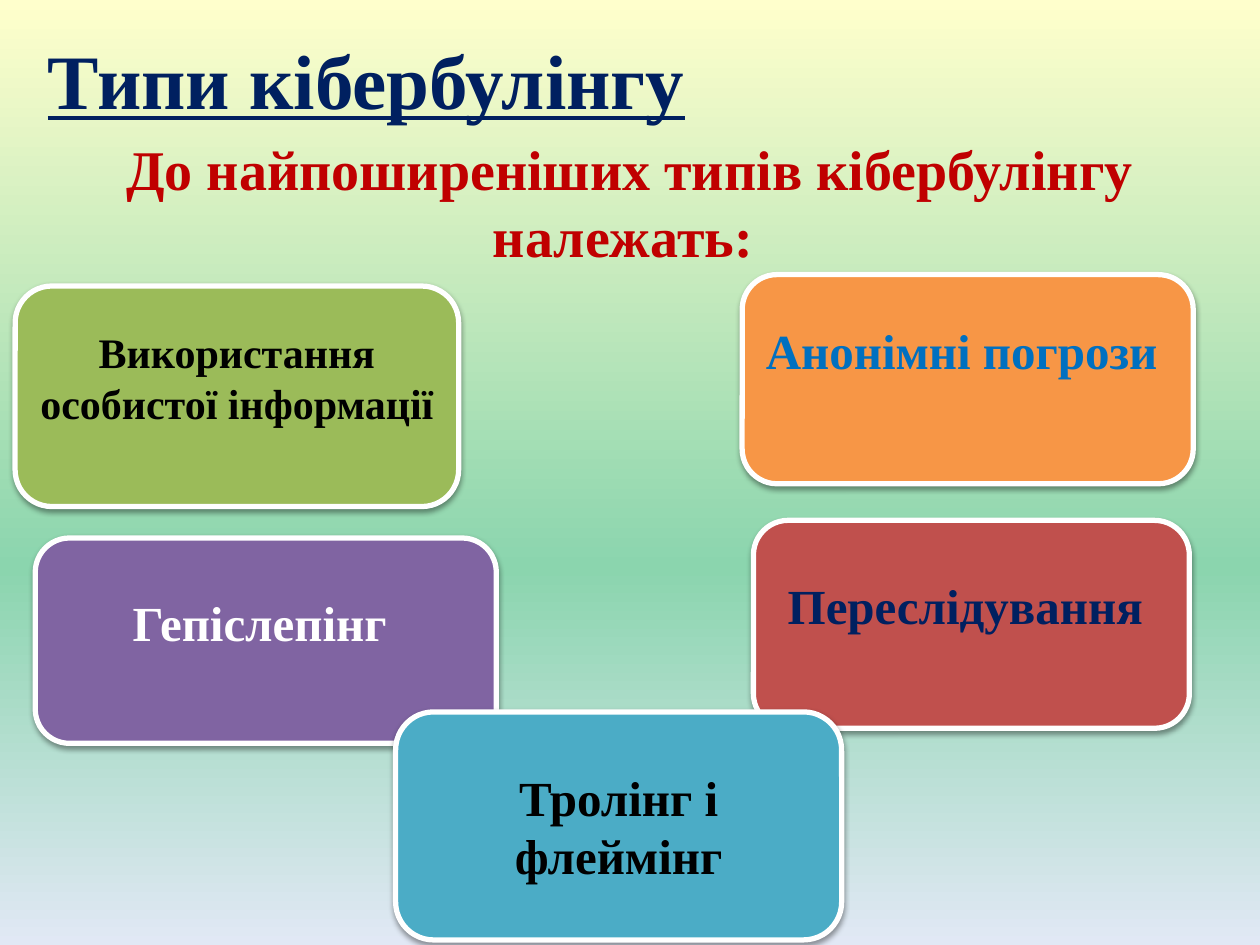
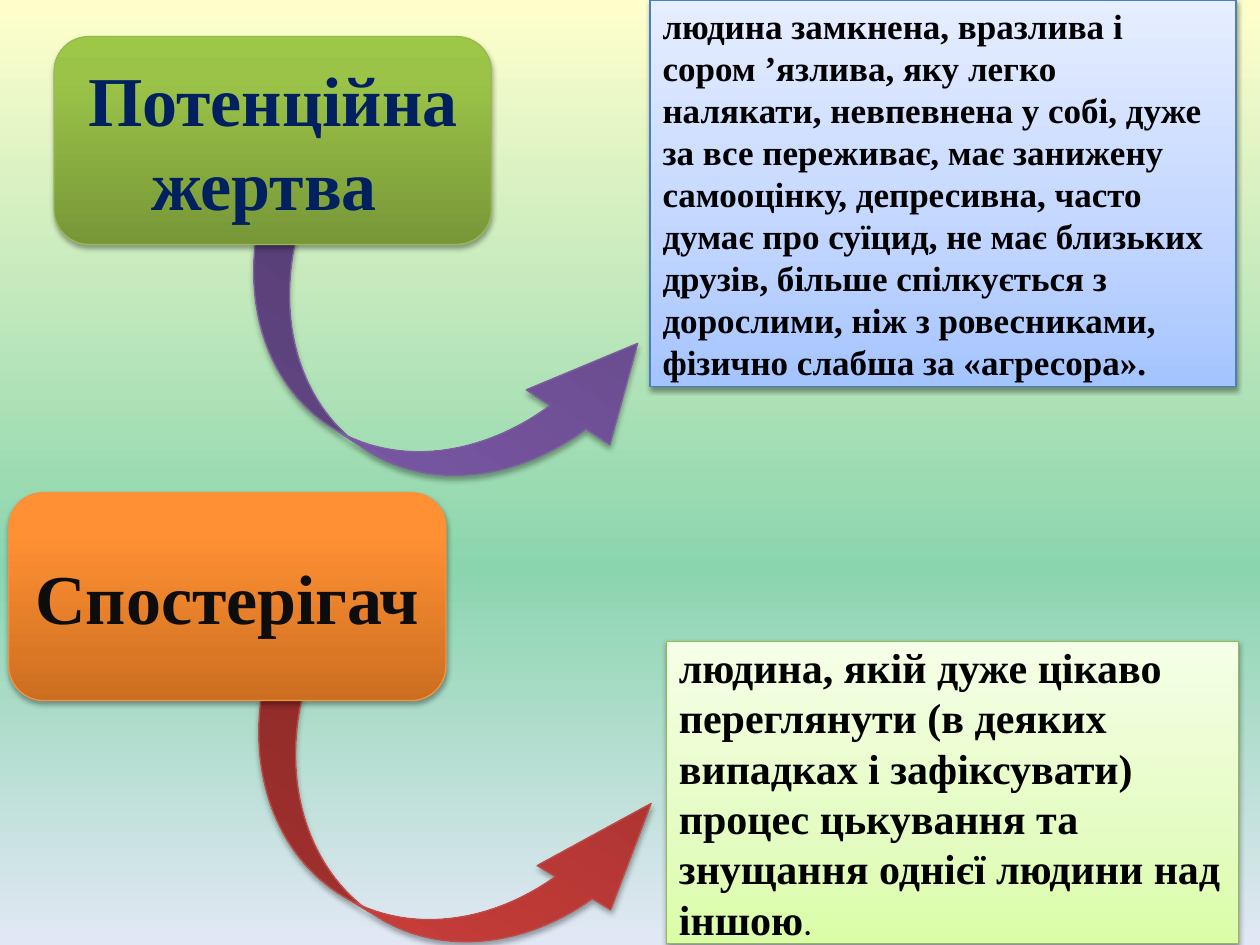
from dataclasses import dataclass

from lxml import etree
from pptx import Presentation
from pptx.dml.color import RGBColor
from pptx.enum.shapes import MSO_SHAPE
from pptx.enum.text import MSO_ANCHOR, PP_ALIGN
from pptx.oxml.ns import qn
from pptx.util import Inches, Pt

ROUNDED = MSO_SHAPE.ROUNDED_RECTANGLE
RECT = MSO_SHAPE.RECTANGLE
CURVED = MSO_SHAPE.CURVED_DOWN_ARROW
MIDDLE, TOP = MSO_ANCHOR.MIDDLE, MSO_ANCHOR.TOP
LEFT, CENTER = PP_ALIGN.LEFT, PP_ALIGN.CENTER
TITLE_ONLY, BLANK = 5, 6

FONT = "Times New Roman"
NAVY, BLACK, WHITE, RED = "002060", "000000", "FFFFFF", "C00000"
BACKGROUND = ((0, "FFFFCC"), (60, "8BD5AE"), (100, "E1E8F5"))
SOFT_SHADOW, DEEP_SHADOW = (35, 1.8), (38, 1.6)


@dataclass
class TypeCard:
    """A kind of cyberbullying; lift raises its text above the middle."""
    text: str
    box: tuple
    fill: str
    color: str
    size: int = 28
    lift: float = 0.3


@dataclass
class Role:
    """A participant: name card, curved arrow and description panel."""
    name: str
    name_box: tuple
    name_color: str
    name_fill: tuple
    name_line: str
    arrow_box: tuple
    arrow_rotation: float
    arrow_adjust: tuple
    arrow_fill: tuple
    arrow_line: str
    text: str
    ending: str
    text_box: tuple
    text_size: int
    text_fill: tuple
    text_line: str


TYPES = [
    TypeCard("Використання особистої інформації ", (0.12, 2.27, 3.52, 1.75), "9BBB59", BLACK, size=24),
    TypeCard("Анонімні погрози ", (5.89, 2.18, 3.58, 1.66), "F79646", "0070C0", lift=0.47),
    TypeCard("Переслідування ", (5.98, 4.13, 3.46, 1.65), "C0504D", NAVY),
    TypeCard("Гепіслепінг ", (0.28, 4.27, 3.66, 1.63), "8064A2", WHITE),
    TypeCard("Тролінг і флеймінг", (3.14, 5.65, 3.54, 1.81), "4BACC6", BLACK, lift=0),
]

ROLES = [
    Role(
        name="Потенційна жертва ",
        name_box=(0.43, 0.29, 3.47, 1.65),
        name_color=NAVY,
        name_fill=((0, "779737"), (80, "9BC348"), (100, "9DC746")),
        name_line="98B955",
        arrow_box=(1.57, 1.8, 3.6, 1.89),
        arrow_rotation=213.3,
        arrow_adjust=(0.18, 0.42, 0.42),
        arrow_fill=((0, "5F4480"), (80, "7B58A6"), (100, "7C57A8")),
        arrow_line="7D60A0",
        text="людина замкнена, вразлива і сором ’язлива, яку легко налякати, "
             "невпевнена у собі, дуже за все переживає, має занижену самооцінку, "
             "депресивна, часто думає про суїцид, не має близьких друзів, більше "
             "спілкується з дорослими, ніж з ровесниками, фізично слабша за «агресора».",
        ending="",
        text_box=(5.16, 0, 4.65, 3.07),
        text_size=20,
        text_fill=((0, "A4C4FF"), (35, "BFD4FF"), (100, "E6EEFF")),
        text_line="4B7EBC",
    ),
    Role(
        name="Спостерігач",
        name_box=(0.07, 3.91, 3.47, 1.65),
        name_color="0D0D0D",
        name_fill=((0, "CC6E20"), (80, "FF9034"), (100, "FF9136")),
        name_line="F69240",
        arrow_box=(1.63, 5.49, 3.6, 1.89),
        arrow_rotation=211,
        arrow_adjust=(0.18, 0.36, 0.47),
        arrow_fill=((0, "9C2F2D"), (80, "CB3E3A"), (100, "CE3B37")),
        arrow_line="BF4C48",
        text="людина, якій дуже цікаво переглянути (в деяких випадках і "
             "зафіксувати) процес цькування та знущання однієї людини над іншою",
        ending=".",
        text_box=(5.29, 5.09, 4.54, 2.4),
        text_size=24,
        text_fill=((0, "DAFDA7"), (35, "E4FCC2"), (100, "F5FFE7")),
        text_line="98B955",
    ),
]


def rgb(color: str) -> RGBColor:
    """Turn a hex string into a colour."""
    return RGBColor.from_string(color)


def inches(box: tuple) -> list:
    """Convert left, top, width and height to lengths."""
    return [Inches(v) for v in box]


def add_color(parent, tag: str, color: str, **attrs):
    """Append an element that holds an RGB colour and return the colour."""
    el = etree.SubElement(parent, qn(tag), attrs)
    return etree.SubElement(el, qn("a:srgbClr"), val=color)


def set_gradient(fill, owner, stops: tuple, angle: int) -> None:
    """Fill with a linear gradient; the angle runs counter-clockwise."""
    fill.gradient()
    fill.gradient_angle = angle
    stop_list = next(owner.iter(qn("a:gsLst")))
    for old in list(stop_list):
        stop_list.remove(old)
    for position, color in stops:
        add_color(stop_list, "a:gs", color, pos=str(position * 1000))


def set_shadow(sp, alpha: int, distance: float) -> None:
    """Give a shape a soft shadow that falls straight down."""
    sp.shadow.inherit = False
    effects = sp._element.spPr.find(qn("a:effectLst"))
    color = add_color(effects, "a:outerShdw", BLACK, blurRad=str(Pt(3.1)),
                      dist=str(Pt(distance)), dir="5400000", rotWithShape="0")
    etree.SubElement(color, qn("a:alpha"), val=str(alpha * 1000))


def add_text(sp, text: str, *, size: int, color: str = BLACK, font: str = FONT,
             bold: bool = True, underline: bool = False, align=LEFT, anchor=MIDDLE) -> None:
    """Append a formatted run to the first paragraph of a shape."""
    tf = sp.text_frame
    tf.word_wrap = True
    tf.vertical_anchor = anchor
    p = tf.paragraphs[0]
    p.alignment = align
    r = p.add_run()
    r.text = text
    r.font.name, r.font.size = font, Pt(size)
    r.font.bold, r.font.underline = bold, underline
    r.font.color.rgb = rgb(color)


def add_panel(s, kind, box: tuple, fill, line: str, width: float, shadow: tuple):
    """Add a shape with a solid (string) or gradient (stops) fill."""
    sp = s.shapes.add_shape(kind, *inches(box))
    if isinstance(fill, str):
        sp.fill.solid()
        sp.fill.fore_color.rgb = rgb(fill)
    else:
        set_gradient(sp.fill, sp._element, fill, 90)
    sp.line.color.rgb = rgb(line)
    sp.line.width = Pt(width)
    set_shadow(sp, *shadow)
    return sp


def add_slide(prs, layout: int):
    """Add a slide with the shared background."""
    s = prs.slides.add_slide(prs.slide_layouts[layout])
    set_gradient(s.background.fill, s._element, BACKGROUND, 270)
    return s


def add_arrow(s, role: Role) -> None:
    """Add the curved arrow from a role's name to its description."""
    sp = add_panel(s, CURVED, role.arrow_box, role.arrow_fill, role.arrow_line, 0.75, SOFT_SHADOW)
    for i, value in enumerate(role.arrow_adjust):
        sp.adjustments[i] = value
    sp.rotation = role.arrow_rotation
    sp._element.spPr.find(qn("a:xfrm")).set("flipH", "1")


def add_role(s, role: Role) -> None:
    """Add a role's name card and description panel."""
    sp = add_panel(s, ROUNDED, role.name_box, role.name_fill, role.name_line, 0.75, SOFT_SHADOW)
    add_text(sp, role.name, size=40, color=role.name_color, align=CENTER)
    sp = add_panel(s, RECT, role.text_box, role.text_fill, role.text_line, 0.75, DEEP_SHADOW)
    add_text(sp, role.text, size=role.text_size)
    if role.ending:
        add_text(sp, role.ending, size=20, font="Calibri", bold=False)


def build_types(prs) -> None:
    """Build the slide with the types of cyberbullying."""
    s = add_slide(prs, TITLE_ONLY)
    title = s.shapes.title
    title.left, title.top, title.width, title.height = inches((0.28, 0, 9, 1.25))
    add_text(title, "Типи кібербулінгу", size=44, color=NAVY, underline=True)
    intro = s.shapes.add_textbox(*inches((0, 1.02, 9.5, 1.25)))
    intro.text_frame.margin_left = Inches(0.6)
    intro.text_frame.paragraphs[0].space_before = Pt(4)
    add_text(intro, "До найпоширеніших типів кібербулінгу належать: ", size=32,
             color=RED, align=CENTER, anchor=TOP)
    for card in TYPES:
        sp = add_panel(s, ROUNDED, card.box, card.fill, WHITE, 3, DEEP_SHADOW)
        sp.text_frame.margin_bottom = Inches(0.05 + card.lift)
        add_text(sp, card.text, size=card.size, color=card.color, align=CENTER)


def build_roles(prs) -> None:
    """Build the slide with the participants."""
    s = add_slide(prs, BLANK)
    for role in ROLES:
        add_arrow(s, role)
    for role in ROLES:
        add_role(s, role)


def main() -> None:
    """Build and save the presentation."""
    prs = Presentation()
    prs.slide_width, prs.slide_height = Inches(10), Inches(7.5)
    build_types(prs)
    build_roles(prs)
    prs.save("out.pptx")


if __name__ == "__main__":
    main()
